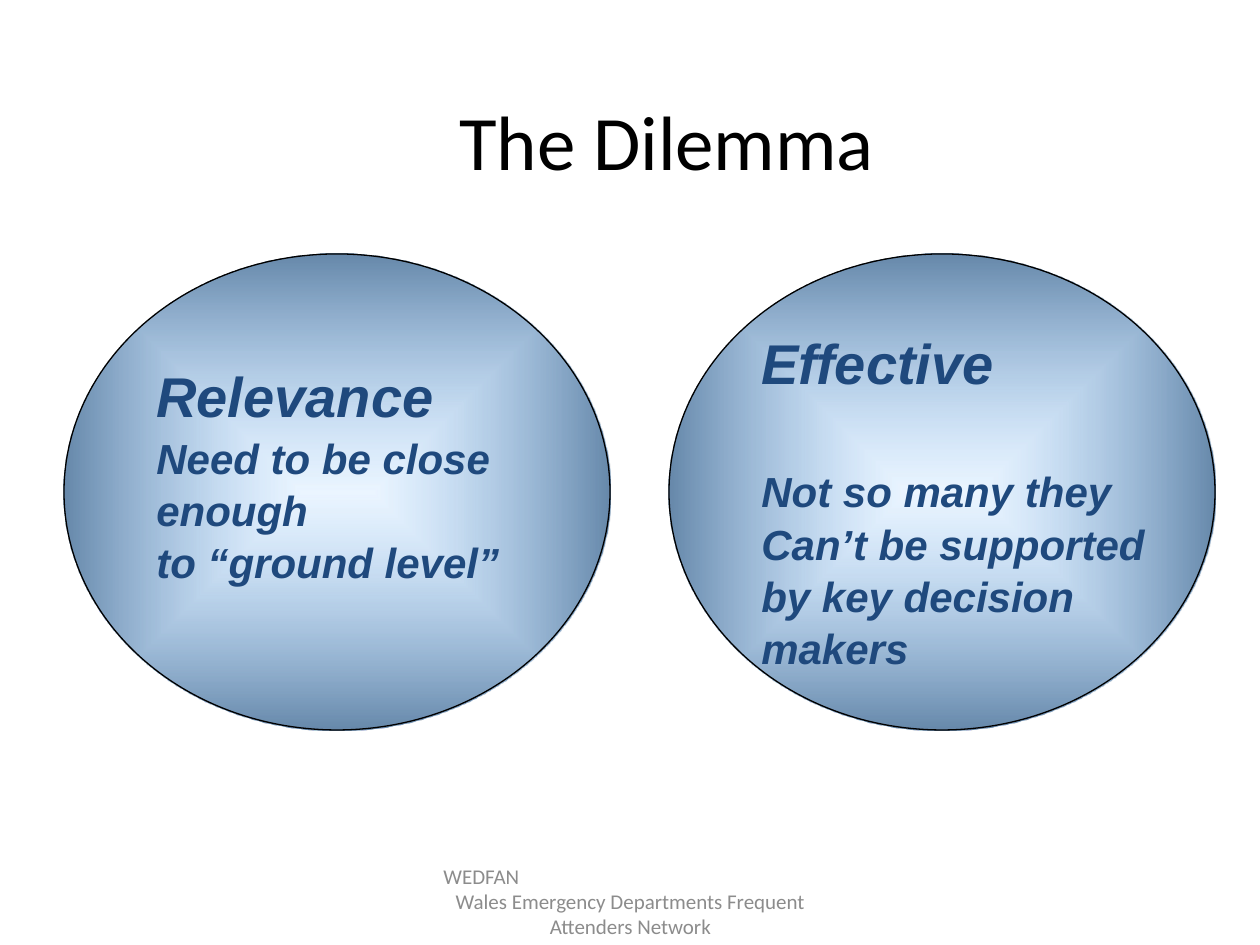
from pptx import Presentation
from pptx.dml.color import RGBColor
from pptx.enum.shapes import MSO_SHAPE
from pptx.enum.text import MSO_ANCHOR, PP_ALIGN
from pptx.oxml import parse_xml
from pptx.oxml.ns import nsdecls
from pptx.util import Emu, Pt

BLACK = RGBColor(0x00, 0x00, 0x00)
NAVY = RGBColor(0x1F, 0x49, 0x7D)
GREY = RGBColor(0x8C, 0x8C, 0x8C)
GLOW = RGBColor(0x99, 0xCC, 0xFF)
RIM = RGBColor(0x66, 0x88, 0xAA)


def px(length):
    return Emu(round(length * 914400 / 126))


def radial_fill(centre, edge):
    """Gradient that runs from a mostly transparent centre to a solid edge."""
    return parse_xml(
        f'<a:gradFill {nsdecls("a")} rotWithShape="1"><a:gsLst>'
        f'<a:gs pos="0"><a:srgbClr val="{centre}"><a:alpha val="19000"/></a:srgbClr></a:gs>'
        f'<a:gs pos="100000"><a:srgbClr val="{edge}"/></a:gs></a:gsLst>'
        '<a:path path="shape"><a:fillToRect l="50000" t="50000" r="50000" b="50000"/></a:path>'
        '</a:gradFill>')


class SlideBuilder:
    """Holds the fonts and the current slide."""
    heading_font = "Calibri"
    circle_font = "Arial"

    def __init__(self, slide):
        self.slide = slide

    def add_text(self, paragraph, text, font, size, color, emphasis=False):
        run = paragraph.add_run()
        run.text = text
        run.font.name = font
        run.font.size = Pt(size)
        run.font.color.rgb = color
        run.font.bold = run.font.italic = emphasis

    def title(self, text, left, top, width, height):
        title = self.slide.shapes.title
        title.left, title.top, title.width, title.height = map(px, (left, top, width, height))
        frame = title.text_frame
        frame.vertical_anchor = MSO_ANCHOR.MIDDLE
        frame.paragraphs[0].alignment = PP_ALIGN.CENTER
        self.add_text(frame.paragraphs[0], text, self.heading_font, 44, BLACK)

    def circle(self, left, heading, lines, inset, gap):
        """Inset is the px above the heading, gap the points below it."""
        circle = self.slide.shapes.add_shape(
            MSO_SHAPE.OVAL, px(left), px(254), px(546), px(476))
        circle.shadow.inherit = False
        circle._element.spPr.insert(2, radial_fill(GLOW, RIM))
        circle.line.color.rgb = BLACK
        circle.line.width = Pt(0.75)
        frame = circle.text_frame
        frame.word_wrap = False
        frame.vertical_anchor = MSO_ANCHOR.TOP
        frame.margin_top, frame.margin_bottom = px(inset), 0
        paragraph = frame.paragraphs[0]
        paragraph.alignment = PP_ALIGN.LEFT
        self.add_text(paragraph, heading, self.circle_font, 32, NAVY, True)
        for index, line in enumerate(lines):
            paragraph = frame.add_paragraph()
            paragraph.alignment = PP_ALIGN.LEFT
            paragraph.space_before = Pt(1 if index else gap)
            self.add_text(paragraph, line, self.circle_font, 24, NAVY, True)

    def footer(self, short_name, full_name, left, top, width, height):
        frame = self.slide.shapes.add_textbox(*map(px, (left, top, width, height))).text_frame
        frame.word_wrap = True
        frame.vertical_anchor = MSO_ANCHOR.MIDDLE
        rows = ((frame.paragraphs[0], short_name, PP_ALIGN.LEFT),
                (frame.add_paragraph(), full_name, PP_ALIGN.CENTER))
        for paragraph, text, alignment in rows:
            paragraph.alignment = alignment
            self.add_text(paragraph, text, self.heading_font, 12, GREY)


def main():
    deck = Presentation()
    deck.slide_width, deck.slide_height = px(1260), px(945)
    builder = SlideBuilder(deck.slides.add_slide(deck.slide_layouts[5]))
    builder.title("The Dilemma", 184, 35, 966, 210)
    builder.circle(64, "Relevance",
                   ("Need to be close", "enough", "to “ground level”"), 38, 2)
    builder.circle(669, "Effective",
                   ("Not so many they", "Can’t be supported", "by key decision", "makers"), 5, 40)
    builder.footer("WEDFAN", "Wales Emergency Departments Frequent Attenders Network",
                   431, 876, 399, 50)
    deck.save("out.pptx")


if __name__ == "__main__":
    main()
